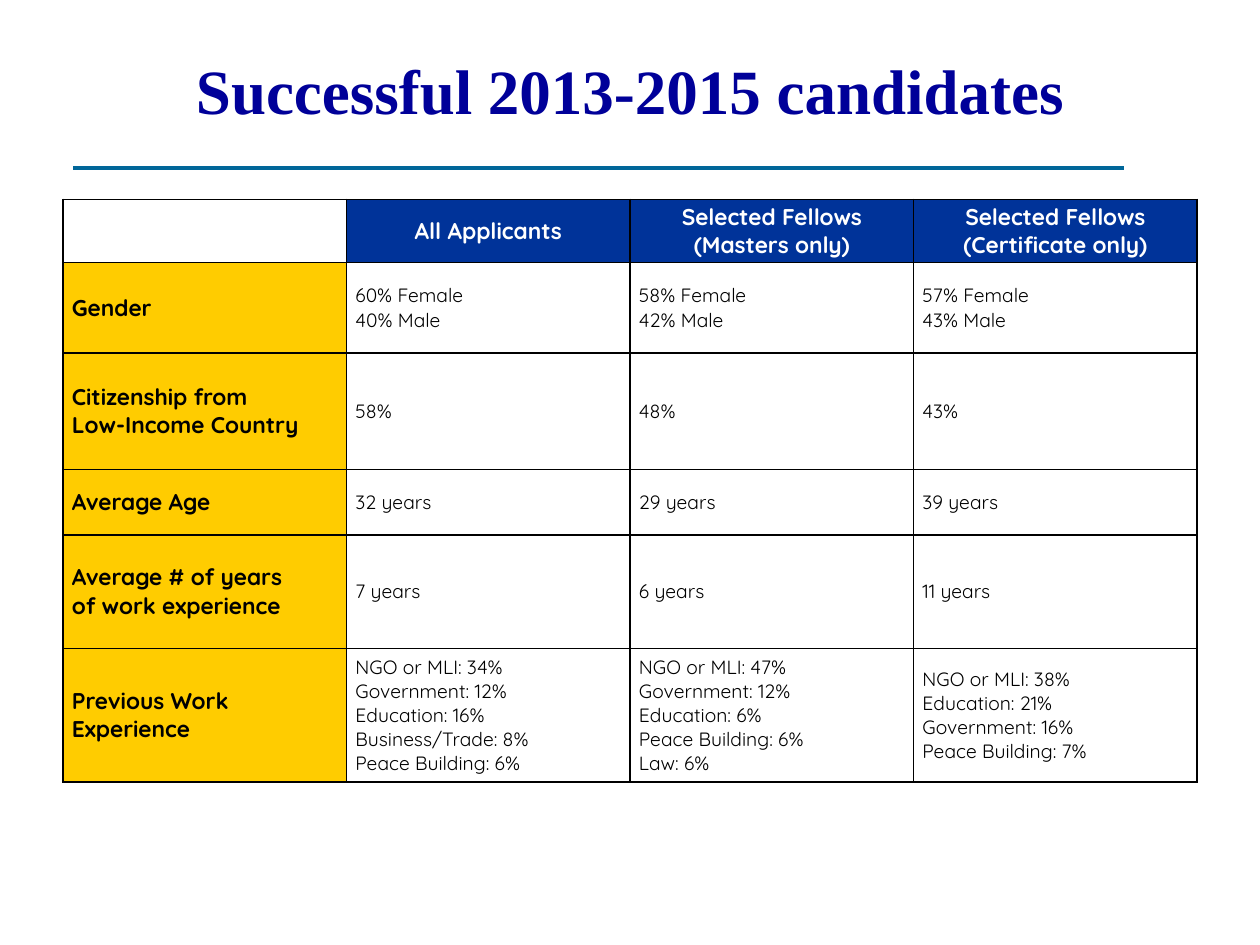
from dataclasses import dataclass

from lxml.etree import SubElement
from pptx import Presentation
from pptx.dml.color import RGBColor
from pptx.enum.shapes import MSO_CONNECTOR
from pptx.enum.text import MSO_ANCHOR, MSO_AUTO_SIZE, PP_ALIGN
from pptx.oxml.ns import qn
from pptx.util import Cm, Pt


@dataclass(frozen=True)
class Theme:
    title_font: str = "Times New Roman"
    table_font: str = "Quicksand"
    title_size: int = 36
    label_size: int = 13
    value_size: int = 11
    title: str = "000099"
    rule: str = "006699"
    header: str = "003399"
    label: str = "FFCC00"
    ink: str = "000000"
    paper: str = "FFFFFF"


THEME = Theme()
ROW_HEIGHTS = [1.27, 1.83, 2.34, 1.32, 2.29, 2.69]
# Each line of a cell is a paragraph; \v is a line break inside one.
ROWS = [
    ["", "All Applicants", "Selected Fellows\n(Masters only)",
     "Selected Fellows\n(Certificate only)"],
    ["Gender", "60% Female\n40% Male", "58% Female\n42% Male",
     "57% Female\n43% Male"],
    ["Citizenship from\vLow-Income Country", "58%", "48%", "43%"],
    ["Average Age", "32 years", "29 years", "39 years"],
    ["Average # of years\vof work experience", "7 years", "6 years", "11 years"],
    ["Previous Work Experience",
     "NGO or MLI: 34%\nGovernment: 12%\nEducation: 16%\n"
     "Business/Trade: 8%\nPeace Building: 6%",
     "NGO or MLI: 47%\nGovernment: 12%\nEducation: 6%\n"
     "Peace Building: 6%\nLaw: 6%",
     "NGO or MLI: 38%\nEducation: 21%\nGovernment: 16%\nPeace Building: 7%"],
]


def write_text(frame, text, *, font, size, color, bold=False, align=PP_ALIGN.LEFT):
    frame.text = text
    frame.word_wrap = True
    for para in frame.paragraphs:
        para.alignment = align
        for span in para.runs:
            span.font.name = font
            span.font.size = Pt(size)
            span.font.bold = bold
            span.font.color.rgb = RGBColor.from_string(color)


def add_title(page, text, left, top, width, height):
    box = page.shapes.title
    box.left, box.top, box.width, box.height = left, top, width, height
    frame = box.text_frame
    frame.auto_size = MSO_AUTO_SIZE.NONE
    frame.vertical_anchor = MSO_ANCHOR.TOP
    frame.margin_top = Cm(0.28)
    write_text(frame, text, font=THEME.title_font, size=THEME.title_size,
               color=THEME.title, bold=True, align=PP_ALIGN.CENTER)


def add_rule(page, left, top, width):
    line = page.shapes.add_connector(
        MSO_CONNECTOR.STRAIGHT, left, top, left + width, top)
    line.line.color.rgb = RGBColor.from_string(THEME.rule)
    line.line.width = Pt(2.25)
    SubElement(line._element.spPr, qn("a:effectLst"))


def set_borders(cell):
    """Must run before the cell's fill is set, as borders come first in the XML."""
    properties = cell._tc.get_or_add_tcPr()
    for side in ("lnL", "lnR", "lnT", "lnB"):
        border = SubElement(properties, qn(f"a:{side}"), w=str(Pt(1)))
        fill = SubElement(border, qn("a:solidFill"))
        SubElement(fill, qn("a:srgbClr"), val=THEME.ink)


def format_cell(cell, text, row, column):
    is_header, is_label = row == 0, column == 0
    set_borders(cell)
    cell.vertical_anchor = MSO_ANCHOR.MIDDLE
    cell.margin_left = cell.margin_right = Cm(0.18)
    cell.margin_top = cell.margin_bottom = 0
    if text and (is_header or is_label):
        cell.fill.solid()
        color = THEME.header if is_header else THEME.label
        cell.fill.fore_color.rgb = RGBColor.from_string(color)
    else:
        cell.fill.background()
    write_text(
        cell.text_frame, text, font=THEME.table_font,
        size=THEME.label_size if is_header or is_label else THEME.value_size,
        color=THEME.paper if is_header else THEME.ink,
        bold=is_header or is_label,
        align=PP_ALIGN.CENTER if is_header else PP_ALIGN.LEFT)


def add_candidate_table(page, left, top, width):
    height = Cm(sum(ROW_HEIGHTS))
    table = page.shapes.add_table(
        len(ROWS), len(ROWS[0]), left, top, width, height).table
    table.first_row = table.horz_banding = False
    for row, (texts, row_height) in enumerate(zip(ROWS, ROW_HEIGHTS)):
        table.rows[row].height = Cm(row_height)
        for column, text in enumerate(texts):
            format_cell(table.cell(row, column), text, row, column)


def main():
    deck = Presentation()
    deck.slide_width, deck.slide_height = Cm(25.4), Cm(19.05)
    page = deck.slides.add_slide(deck.slide_layouts.get_by_name("Title Only"))
    margin = Cm(1.27)
    content_width = deck.slide_width - 2 * margin
    add_title(page, "Successful 2013-2015 candidates",
              margin, Cm(0.76), content_width, Cm(3.18))
    add_candidate_table(page, margin, Cm(4.02), content_width)
    add_rule(page, Cm(1.48), Cm(3.39), Cm(21.17))
    deck.save("out.pptx")


if __name__ == "__main__":
    main()
